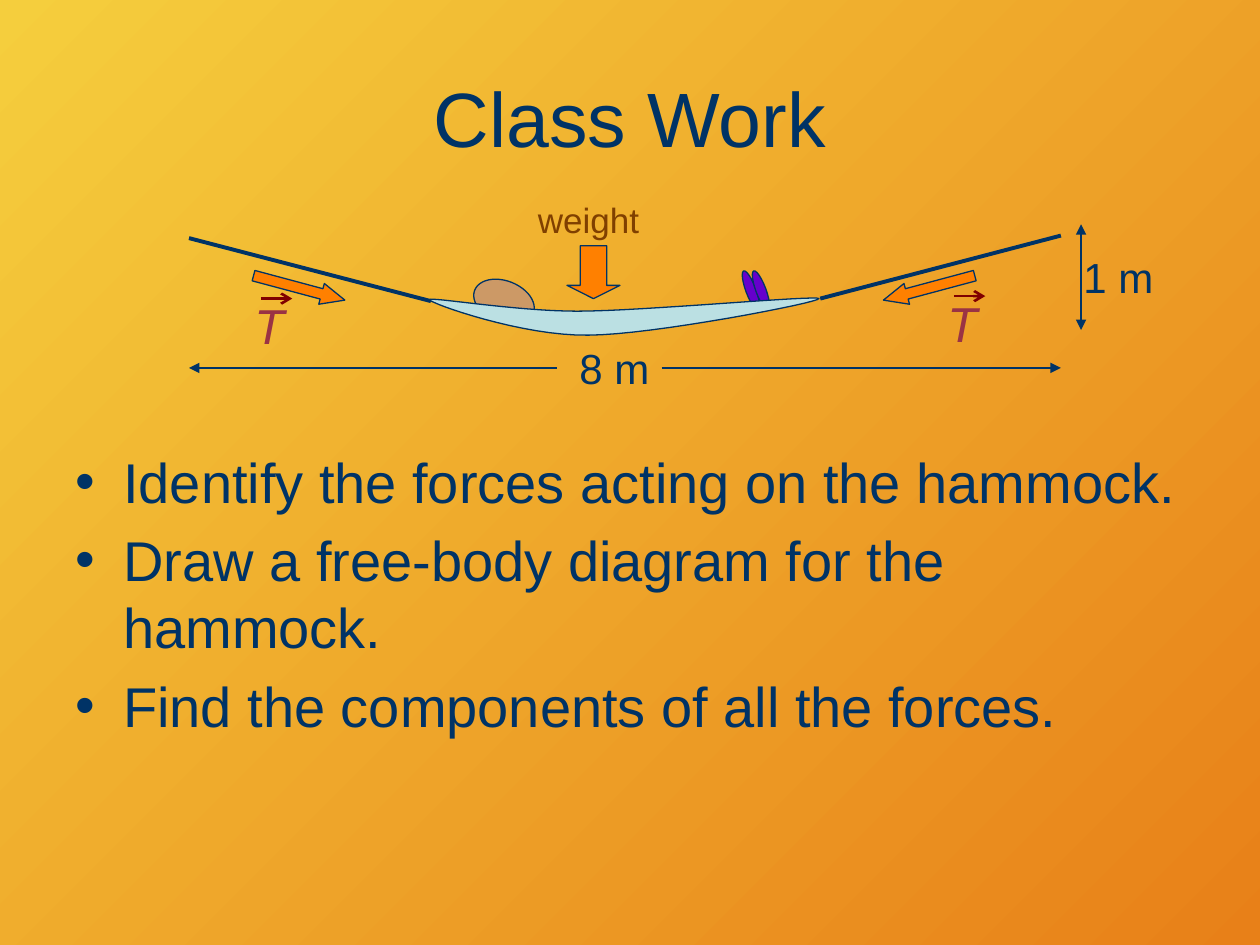
from lxml import etree
from pptx import Presentation, util as u
from pptx.dml.color import RGBColor
from pptx.enum import shapes, text
from pptx.oxml.ns import qn

W, H = 10, 7.5
NAVY, ORANGE, PURPLE = "003366", "FF8000", "6600CC"
MAROON, ROSE, BROWN = "800000", "9A3344", "804000"
BACKGROUND = ["F5CE3D", "E88018"]
TITLE = "Class Work"
TASKS = [
    "Identify the forces acting on the hammock.",
    "Draw a free-body diagram for the hammock.",
    "Find the components of all the forces.",
]
LABELS = [
    ("8 m", (4.5, 2.67, 0.76, 0.5), 24, NAVY, False),
    ("1 m", (8.5, 1.95, 0.76, 0.5), 24, NAVY, False),
    ("weight", (4.17, 1.53, 1.01, 0.43), 20, BROWN, False),
    ("T", (7.42, 2.28, 0.44, 0.57), 28, ROSE, True),
    ("T", (1.92, 2.3, 0.44, 0.57), 28, ROSE, True),
]
ROPES = [((1.5, 1.89), (3.42, 2.39)), ((8.42, 1.87), (6.51, 2.37))]
SPANS = [
    ((4.42, 2.92), (1.5, 2.92), {"tailEnd": "triangle"}),
    ((5.25, 2.92), (8.42, 2.92), {"tailEnd": "triangle"}),
    ((8.58, 1.78), (8.58, 2.62), {"headEnd": "triangle", "tailEnd": "triangle"}),
]
VECTORS = [((7.57, 2.35), (7.82, 2.35)), ((2.07, 2.37), (2.32, 2.37))]
PERSON = [
    ("OVAL", (5.92, 2.14, 0.08, 0.33), PURPLE, -20.4),
    ("OVAL", (6, 2.14, 0.08, 0.33), PURPLE, -20.4),
    ("OVAL", (3.75, 2.23, 0.5, 0.33), "CC9966", 21.4),
]
FORCES = [
    ("RIGHT_ARROW", (2, 2.2, 0.75, 0.17), 15, (0.5, 1.125), False),
    ("RIGHT_ARROW", (7, 2.2, 0.75, 0.17), -15, (0.5, 1.125), True),
    ("DOWN_ARROW", (4.5, 1.95, 0.42, 0.42), 0, (0.5, 0.25), False),
]
HAMMOCK_START = (3.41, 2.38)
HAMMOCK = [
    ((3.42, 2.41), (4.15, 2.67), (4.67, 2.66)),
    ((5.17, 2.66), (6.51, 2.4), (6.5, 2.37)),
    ((6.49, 2.34), (5.1, 2.47), (4.58, 2.47)),
    ((4.08, 2.47), (3.39, 2.35), HAMMOCK_START),
]
STEPS = 16

prs = Presentation()
prs.slide_width, prs.slide_height = u.Inches(W), u.Inches(H)
s = prs.slides.add_slide(prs.slide_layouts[6])


def rgb(value):
    return RGBColor.from_string(value)


def inches(values):
    return [u.Inches(v) for v in values]


def paint(sp, fill):
    sp.shadow.inherit = False
    sp.fill.solid()
    sp.fill.fore_color.rgb = rgb(fill)
    sp.line.color.rgb = rgb(NAVY)
    sp.line.width = u.Pt(0.75)


def add_preset(kind, box, fill, angle):
    sp = s.shapes.add_shape(shapes.MSO_SHAPE[kind], *inches(box))
    sp.rotation = angle
    paint(sp, fill)
    return sp


def add_line(start, end, color, width, ends):
    c = s.shapes.add_connector(shapes.MSO_CONNECTOR.STRAIGHT, *inches(start + end))
    c.line.color.rgb = rgb(color)
    c.line.width = u.Pt(width)
    ln = c.line._get_or_add_ln()
    for tag, kind in ends.items():
        etree.SubElement(ln, qn("a:" + tag), type=kind)
    etree.SubElement(c._element.spPr, qn("a:effectLst"))


def add_text(lines, box, size, color, italic=False, wrap=True, anchor="TOP", align="LEFT"):
    tf = s.shapes.add_textbox(*inches(box)).text_frame
    tf.word_wrap = wrap
    tf.vertical_anchor = text.MSO_ANCHOR[anchor]
    tf.text = "\n".join(lines)
    fmt = {"name": "Arial", "size": u.Pt(size), "italic": italic}
    for p in tf.paragraphs:
        p.alignment = text.PP_ALIGN[align]
        f = p.runs[0].font
        f.color.rgb = rgb(color)
        for key, value in fmt.items():
            setattr(f, key, value)
    return tf


def bezier(p0, p1, p2, p3):
    for i in range(1, STEPS + 1):
        t = i / STEPS
        yield tuple(
            (1 - t) ** 3 * a + 3 * (1 - t) ** 2 * t * b + 3 * (1 - t) * t**2 * c + t**3 * d
            for a, b, c, d in zip(p0, p1, p2, p3)
        )


bg = s.background.fill
bg.gradient()
bg.gradient_angle = 315
for stop, color, position in zip(bg.gradient_stops, BACKGROUND, (0, 1)):
    stop.color.rgb = rgb(color)
    stop.position = position

add_text([TITLE], (0.5, 0.3, 9, 1.25), 44, NAVY, anchor="MIDDLE", align="CENTER")
body = add_text(TASKS, (0.5, 3.5, 9, 3.33), 32, NAVY)
for p in body.paragraphs:
    p.space_before = u.Pt(6.4)
    pPr = p._p.get_or_add_pPr()
    pPr.set("marL", str(u.Inches(0.38)))
    pPr.set("indent", str(-u.Inches(0.38)))
    etree.SubElement(pPr, qn("a:buFont"), typeface="Arial")
    etree.SubElement(pPr, qn("a:buChar"), char="•")

add_line(*ROPES[0], NAVY, 2.25, {})
for item in PERSON:
    add_preset(*item)

points, start = [], HAMMOCK_START
for c1, c2, end in HAMMOCK:
    points += [inches(point) for point in bezier(start, c1, c2, end)]
    start = end
fb = s.shapes.build_freeform(*inches(HAMMOCK_START), scale=1.0)
fb.add_line_segments(points, close=True)
paint(fb.convert_to_shape(), "BBE0E3")
add_line(*ROPES[1], NAVY, 2.25, {})

for start, end, ends in SPANS:
    add_line(start, end, NAVY, 0.75, ends)
for kind, box, angle, adjust, flip in FORCES:
    sp = add_preset(kind, box, ORANGE, angle)
    for i, value in enumerate(adjust):
        sp.adjustments[i] = value
    if flip:
        sp._element.spPr.xfrm.set("flipH", "1")
for label, box, size, color, italic in LABELS:
    add_text([label], box, size, color, italic, wrap=False)
for start, end in VECTORS:
    add_line(start, end, MAROON, 1.5, {"tailEnd": "arrow"})

prs.save("out.pptx")
